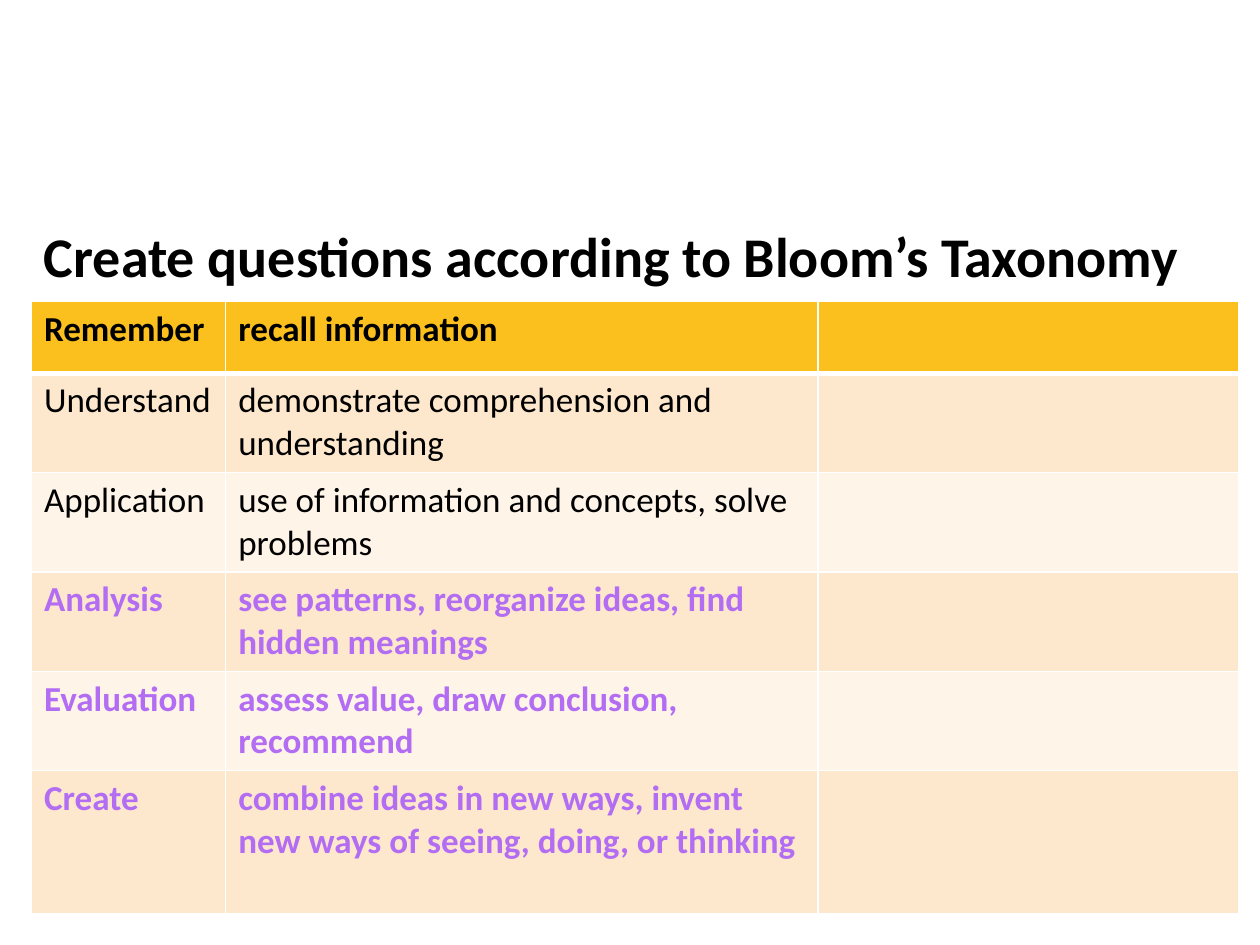
from dataclasses import dataclass

from lxml.etree import SubElement
from pptx import Presentation
from pptx.dml.color import RGBColor
from pptx.enum.text import MSO_ANCHOR
from pptx.oxml.ns import qn
from pptx.util import Pt


@dataclass(frozen=True)
class Theme:
    font: str = "Calibri"
    title_size: int = 32
    body_size: int = 20
    black: str = "000000"
    purple: str = "B26DF3"
    header: str = "FBC01E"
    bands: tuple = ("FDE8CD", "FEF4E8")
    border: str = "FFFFFF"


theme = Theme()


def write_text(frame, text, size, color, bold):
    para = frame.paragraphs[0]
    span = para.add_run()
    span.text = text
    formats = {"name": theme.font, "size": Pt(size), "bold": bold}
    for name, value in formats.items():
        setattr(span.font, name, value)
    span.font.color.rgb = RGBColor.from_string(color)


def add_border(cell, side, width):
    # Borders must come before the cell's fill
    line = SubElement(cell._tc.get_or_add_tcPr(), qn(f"a:{side}"), w=str(Pt(width)))
    fill = SubElement(line, qn("a:solidFill"))
    SubElement(fill, qn("a:srgbClr"), val=theme.border)


deck = Presentation()
deck.slide_width, deck.slide_height = Pt(720), Pt(540)
page = deck.slides.add_slide(deck.slide_layouts[6])

# Title
box = page.shapes.add_textbox(Pt(18), Pt(114.5), Pt(683.3), Pt(54))
frame = box.text_frame
frame.word_wrap = True
frame.vertical_anchor = MSO_ANCHOR.BOTTOM
write_text(frame, "Create questions according to Bloom’s Taxonomy",
           theme.title_size, theme.black, True)

# Levels of the taxonomy: name, meaning, text colour, bold
levels = [
    ("Remember", "recall information", theme.black, True),
    ("Understand", "demonstrate comprehension and understanding", theme.black, False),
    ("Application", "use of information and concepts, solve problems", theme.black, False),
    ("Analysis", "see patterns, reorganize ideas, find hidden meanings", theme.purple, True),
    ("Evaluation", "assess value, draw conclusion, recommend", theme.purple, True),
    ("Create", "combine ideas in new ways, invent new ways of seeing, doing, or thinking",
     theme.purple, True),
]
column_widths = [111, 338.4, 240.5]
row_heights = [41] + [56.8] * 4 + [81.5]

# Table
table = page.shapes.add_table(
    len(levels), len(column_widths), Pt(18), Pt(172.3),
    Pt(sum(column_widths)), Pt(sum(row_heights))).table
for column, width in zip(table.columns, column_widths):
    column.width = Pt(width)

for index, (name, meaning, color, bold) in enumerate(levels):
    table.rows[index].height = Pt(row_heights[index])
    band = theme.bands[(index - 1) % 2] if index else theme.header
    borders = {"lnL": 1, "lnR": 1,
               "lnT": 3 if index == 1 else 1,
               "lnB": 3 if index == 0 else 1}
    for cell, text in zip(table.rows[index].cells, (name, meaning, "")):
        for side, width in borders.items():
            add_border(cell, side, width)
        cell.fill.solid()
        cell.fill.fore_color.rgb = RGBColor.from_string(band)
        if text:
            write_text(cell.text_frame, text, theme.body_size, color, bold)

deck.save("out.pptx")
